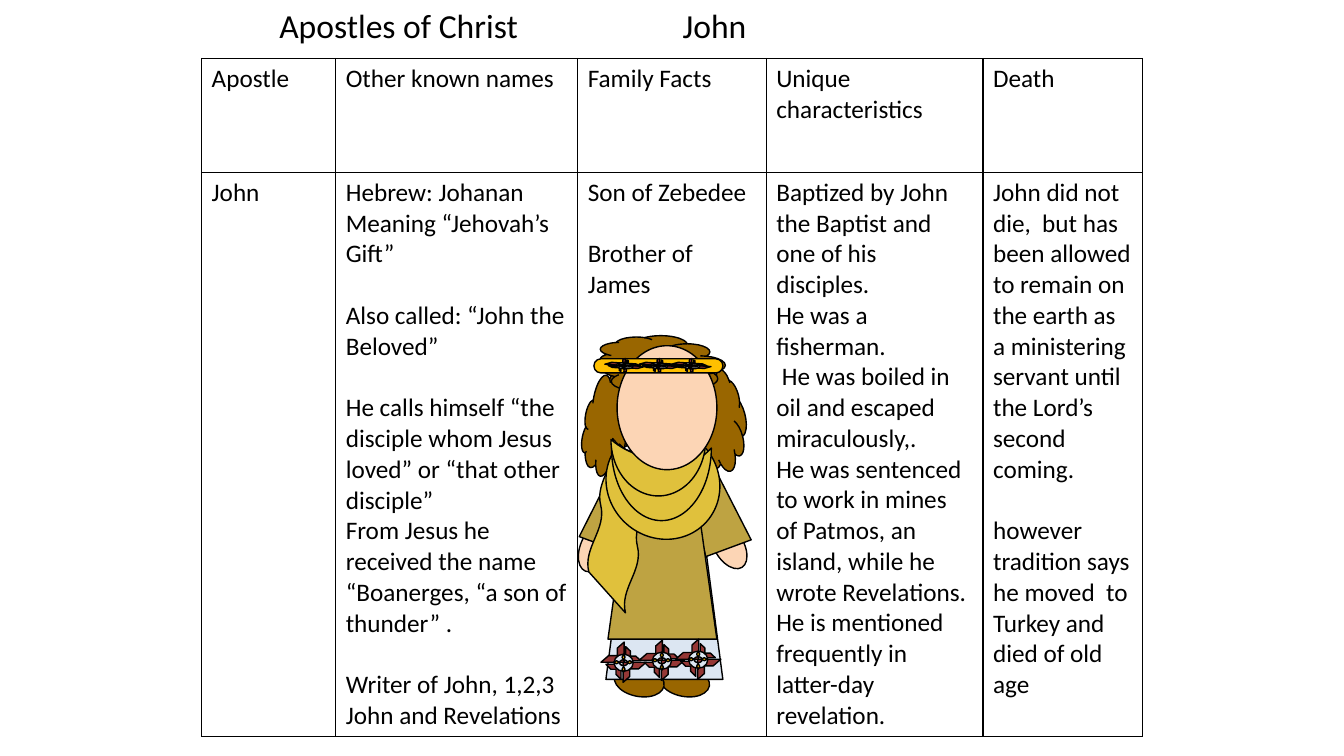
from typing import NamedTuple

from lxml import etree
from pptx import Presentation
from pptx.dml.color import RGBColor
from pptx.enum.shapes import MSO_SHAPE
from pptx.enum.text import MSO_ANCHOR, MSO_AUTO_SIZE, PP_ALIGN
from pptx.oxml.ns import qn
from pptx.util import Inches, Pt

OVAL, TRAPEZOID, CLOUD = MSO_SHAPE.OVAL, MSO_SHAPE.TRAPEZOID, MSO_SHAPE.CLOUD
TRIANGLE, WAVE, PIE = MSO_SHAPE.ISOSCELES_TRIANGLE, MSO_SHAPE.DOUBLE_WAVE, MSO_SHAPE.PIE
MOON, FRAME, DONUT = MSO_SHAPE.MOON, MSO_SHAPE.HALF_FRAME, MSO_SHAPE.DONUT
DIAMOND, ROUNDED = MSO_SHAPE.DIAMOND, MSO_SHAPE.ROUNDED_RECTANGLE
TOP, LEFT, NO_AUTOFIT = MSO_ANCHOR.TOP, PP_ALIGN.LEFT, MSO_AUTO_SIZE.NONE

FONT = "Calibri"
COLORS = {
    "black": "000000", "brown": "996600", "hem": "DCE6F2", "skin": "FCD5B5",
    "robe": "BEA342", "scarf": "E0C13C", "petal": "953735", "gold": "FFC000",
}


class Piece(NamedTuple):
    kind: MSO_SHAPE
    color: str
    x: float
    y: float
    w: float
    h: float
    rot: float = 0
    adj: tuple[float, ...] = ()
    flip: bool = False


class Para(NamedTuple):
    text: str
    gap: bool = False


COLUMNS = [1.33, 2.4, 1.87, 2.15, 1.58]
ROWS = [1.13, 5.37]
CELLS = [
    [[Para(t)] for t in ("Apostle", "Other known names", "Family Facts",
                         "Unique characteristics", "Death")],
    [
        [Para("John")],
        [
            Para("Hebrew: Johanan"),
            Para("Meaning “Jehovah’s Gift”"),
            Para("Also called: “John the Beloved”", True),
            Para("He calls himself “the disciple whom Jesus loved” or “that other disciple”", True),
            Para("From Jesus he received the name “Boanerges, “a son of thunder” ."),
            Para("Writer of John, 1,2,3 John and Revelations", True),
        ],
        [Para("Son of Zebedee"), Para("Brother of James", True)],
        [
            Para("Baptized by John the Baptist and one of his disciples."),
            Para("He was a fisherman."),
            Para(" He was boiled in oil and escaped miraculously,."),
            Para("He was sentenced to work in mines of Patmos, an island, "
                 "while he wrote Revelations."),
            Para("He is mentioned  frequently in latter-day revelation."),
        ],
        [
            Para("John did not die,  but has been allowed to remain on the earth as "
                 "a ministering servant until the Lord’s second coming."),
            Para("however tradition says he moved  to Turkey and died of old age", True),
        ],
    ],
]

BODY = [
    Piece(OVAL, "brown", 6.54, 6.61, 0.5, 0.3, 10.8),
    Piece(OVAL, "brown", 6.09, 6.61, 0.5, 0.3, 10.8),
    Piece(TRAPEZOID, "hem", 6.01, 4.53, 1.16, 2.21),
    Piece(OVAL, "skin", 5.65, 5.29, 0.5, 0.29, 112.1),
    Piece(OVAL, "skin", 6.98, 5.27, 0.5, 0.29, 59.2),
    Piece(TRAPEZOID, "robe", 5.9, 4.46, 0.44, 0.97, 20.3),
    Piece(TRAPEZOID, "robe", 6.81, 4.46, 0.48, 1.01, 339.7),
    Piece(CLOUD, "brown", 5.8, 3.64, 0.51, 1.09, 11.2),
    Piece(CLOUD, "brown", 6.82, 3.69, 0.58, 1, 345.1),
    Piece(TRAPEZOID, "robe", 6.03, 4.42, 1.08, 1.92),
    Piece(TRIANGLE, "skin", 6.39, 4.58, 0.36, 0.49, 180),
    Piece(CLOUD, "brown", 6.27, 3.01, 0.6, 1.24, 270),
    Piece(WAVE, "scarf", 5.3, 4.97, 1.68, 0.49, 280.1, (0.062, -0.1)),
    Piece(PIE, "scarf", 6.03, 4.21, 1.09, 1.16, 311.6),
    Piece(MOON, "scarf", 6.2, 4.31, 0.72, 0.99, 270, (0.677,)),
    Piece(MOON, "scarf", 6.25, 4.17, 0.56, 0.94, 270, (0.677,)),
    Piece(OVAL, "skin", 6.12, 3.43, 0.99, 1.23),
]
HEM_FLOWER = [
    Piece(FRAME, "petal", 5.96, 6.37, 0.23, 0.2, 180),
    Piece(FRAME, "petal", 6.18, 6.57, 0.23, 0.2),
    Piece(FRAME, "petal", 6.21, 6.41, 0.14, 0.15, 270),
    Piece(FRAME, "petal", 6.01, 6.59, 0.15, 0.15, flip=True),
    Piece(DONUT, "hem", 6.09, 6.49, 0.19, 0.17, adj=(0.326,)),
    Piece(DIAMOND, "gold", 6.17, 6.49, 0.03, 0.06),
    Piece(DIAMOND, "gold", 6.17, 6.61, 0.03, 0.06),
    Piece(DIAMOND, "gold", 6.1, 6.54, 0.03, 0.06, 90),
    Piece(DIAMOND, "gold", 6.23, 6.54, 0.03, 0.06, 90),
]
HEADBAND = [Piece(ROUNDED, "gold", 5.89, 3.56, 1.28, 0.14, adj=(0.5,))]
BAND_FLOWER = [
    Piece(FRAME, "petal", 6, 3.55, 0.2, 0.07, 183.8),
    Piece(FRAME, "petal", 6.19, 3.63, 0.2, 0.07, 3.8),
    Piece(FRAME, "petal", 6.26, 3.53, 0.05, 0.14, 273.8),
    Piece(FRAME, "petal", 6.03, 3.63, 0.13, 0.05, 3.8, flip=True),
    Piece(DONUT, "hem", 6.11, 3.6, 0.17, 0.06, 3.8, (0.326,)),
    Piece(DIAMOND, "gold", 6.18, 3.6, 0.03, 0.02, 3.8),
    Piece(DIAMOND, "gold", 6.17, 3.64, 0.03, 0.02, 3.8),
    Piece(DIAMOND, "gold", 6.13, 3.6, 0.01, 0.05, 93.8),
    Piece(DIAMOND, "gold", 6.24, 3.6, 0.01, 0.05, 93.8),
]
HEM_OFFSETS = [(0, 0), (0.38, -0.02), (0.74, -0.03)]
BAND_OFFSETS = [(0, 0), (0.34, 0), (0.66, 0)]


def color(name: str) -> RGBColor:
    return RGBColor.from_string(COLORS[name])


def add_run(p, text: str, size: int) -> None:
    r = p.add_run()
    r.text = text
    r.font.name, r.font.size = FONT, Pt(size)
    r.font.color.rgb = color("black")


def add_title(s) -> None:
    sp = s.shapes.title
    sp.left, sp.top, sp.width, sp.height = Inches(2.67), Inches(0), Inches(7.25), Inches(0.5)
    tf = sp.text_frame
    tf.word_wrap, tf.auto_size, tf.vertical_anchor = True, NO_AUTOFIT, TOP
    p = tf.paragraphs[0]
    p.alignment = LEFT
    tabs = etree.SubElement(p._p.get_or_add_pPr(), qn("a:tabLst"))
    etree.SubElement(tabs, qn("a:tab"), pos=str(Inches(4)), algn="l")
    add_run(p, "Apostles of Christ\tJohn", 24)


def format_cell(cell, paras: list[Para]) -> None:
    tc_pr = cell._tc.get_or_add_tcPr()
    for side in ("a:lnL", "a:lnR", "a:lnT", "a:lnB"):
        ln = etree.SubElement(tc_pr, qn(side), w=str(Pt(1)))
        fill = etree.SubElement(ln, qn("a:solidFill"))
        etree.SubElement(fill, qn("a:srgbClr"), val=COLORS["black"])
    cell.fill.background()
    tf = cell.text_frame
    for i, para in enumerate(paras):
        p = tf.add_paragraph() if i else tf.paragraphs[0]
        if para.gap:
            p.space_before = Pt(22)
        add_run(p, para.text, 18)


def add_facts_table(s) -> None:
    frame = s.shapes.add_table(len(ROWS), len(COLUMNS), Inches(2), Inches(0.58),
                               Inches(sum(COLUMNS)), Inches(sum(ROWS)))
    table = frame.table
    table.first_row = table.horz_banding = False
    for column, width in zip(table.columns, COLUMNS):
        column.width = Inches(width)
    for row, height, contents in zip(table.rows, ROWS, CELLS):
        row.height = Inches(height)
        for cell, paras in zip(row.cells, contents):
            format_cell(cell, paras)


def draw(shapes, pieces: list[Piece], dx: float = 0, dy: float = 0) -> None:
    for piece in pieces:
        sp = shapes.add_shape(piece.kind, Inches(piece.x + dx), Inches(piece.y + dy),
                              Inches(piece.w), Inches(piece.h))
        sp.rotation = piece.rot
        sp.shadow.inherit = False
        sp.fill.solid()
        sp.fill.fore_color.rgb = color(piece.color)
        sp.line.color.rgb = color("black")
        sp.line.width = Pt(1)
        for i, value in enumerate(piece.adj):
            sp.adjustments[i] = value
        if piece.flip:
            sp.element.spPr.get_or_add_xfrm().set("flipH", "1")


def add_apostle(s) -> None:
    shapes = s.shapes.add_group_shape().shapes
    draw(shapes, BODY)
    for dx, dy in HEM_OFFSETS:
        draw(shapes, HEM_FLOWER, dx, dy)
    draw(shapes, HEADBAND)
    for dx, dy in BAND_OFFSETS:
        draw(shapes, BAND_FLOWER, dx, dy)


def main() -> None:
    """Build the slide of facts about the apostle John."""
    prs = Presentation()
    prs.slide_width, prs.slide_height = Inches(13.33), Inches(7.5)
    s = prs.slides.add_slide(prs.slide_layouts[5])
    add_title(s)
    add_facts_table(s)
    add_apostle(s)
    prs.save("out.pptx")


if __name__ == "__main__":
    main()
